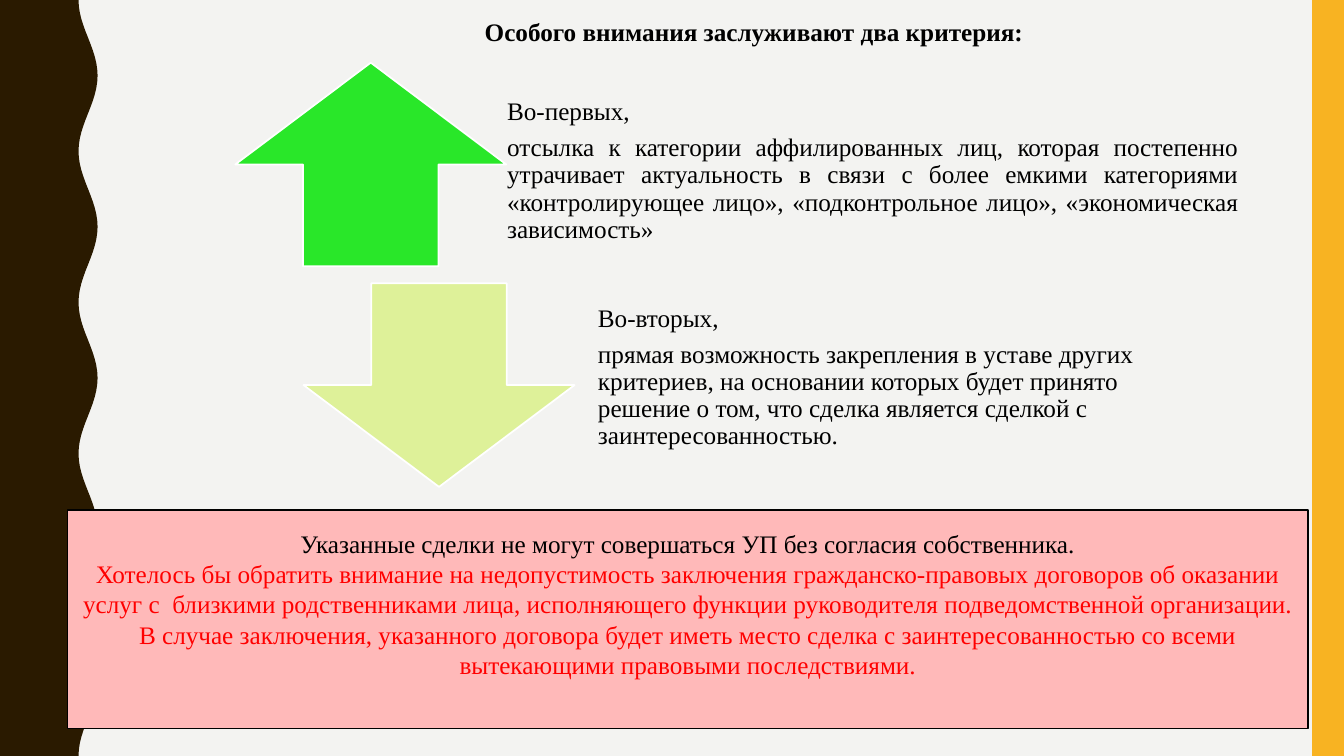
from math import cos, pi

from pptx import Presentation
from pptx.dml.color import RGBColor
from pptx.enum.shapes import MSO_SHAPE as Shape
from pptx.enum.text import MSO_ANCHOR as Anchor, MSO_AUTO_SIZE as AutoSize, PP_ALIGN as Align
from pptx.util import Cm, Pt

PAPER = RGBColor(0xF3, 0xF3, 0xF1)
BROWN = RGBColor(0x2A, 0x1A, 0x00)
AMBER = RGBColor(0xF8, 0xB3, 0x22)
GREEN = RGBColor(0x29, 0xE7, 0x29)
LIME = RGBColor(0xDE, 0xF1, 0x99)
PINK = RGBColor(0xFF, 0xB9, 0xB9)
RED = RGBColor(0xFF, 0x00, 0x00)
BLACK = RGBColor(0x00, 0x00, 0x00)
WHITE = RGBColor(0xFF, 0xFF, 0xFF)

WIDTH, HEIGHT = 33.87, 19.05
ARROW_W, ARROW_H = 6.83, 5.13
BAND_W = 0.8


def apply(target, values):
    for name, value in values.items():
        setattr(target, name, value)


class SlideBuilder:
    font = {"name": "Times New Roman", "size": Pt(18), "bold": False}
    criterion = {"line_spacing": 0.9, "space_after": Pt(6.3)}

    def __init__(self, prs):
        self.slide = prs.slides.add_slide(prs.slide_layouts[5])
        fill = self.slide.background.fill
        fill.solid()
        fill.fore_color.rgb = PAPER

    def paint(self, sp, color, line=None):
        sp.shadow.inherit = False
        sp.fill.solid()
        sp.fill.fore_color.rgb = color
        if line is None:
            sp.line.fill.background()
        else:
            sp.line.color.rgb = line
            sp.line.width = Pt(1.25)

    def put_text(self, sp, paragraphs, frame, para, font={}):
        tf = sp.text_frame
        apply(tf, {"word_wrap": True, "auto_size": AutoSize.NONE, **frame})
        for i, (text, color) in enumerate(paragraphs):
            p = tf.add_paragraph() if i else tf.paragraphs[0]
            apply(p, para)
            r = p.add_run()
            r.text = text
            apply(r.font, {**self.font, **font})
            r.font.color.rgb = color

    def title(self, text, left, top, width, height):
        sp = self.slide.shapes.title
        apply(sp, {"left": Cm(left), "top": Cm(top), "width": Cm(width), "height": Cm(height)})
        self.put_text(sp, [(text, BLACK)], {"vertical_anchor": Anchor.TOP},
                      {"alignment": Align.CENTER}, {"bold": True})

    def shape(self, kind, left, top, width, height, color, line=None):
        sp = self.slide.shapes.add_shape(kind, Cm(left), Cm(top), Cm(width), Cm(height))
        self.paint(sp, color, line)
        return sp

    def wavy_edge(self, middle, swing, waves, color):
        steps = waves * 24
        points = [(Cm(middle - swing * cos(2 * pi * waves * i / steps)), Cm(HEIGHT * i / steps))
                  for i in range(steps + 1)]
        outline = self.slide.shapes.build_freeform(0, 0)
        outline.add_line_segments(points + [(0, Cm(HEIGHT))])
        self.paint(outline.convert_to_shape(), color)

    def text(self, lines, left, top, width, height, align):
        sp = self.slide.shapes.add_textbox(Cm(left), Cm(top), Cm(width), Cm(height))
        frame = {"vertical_anchor": Anchor.MIDDLE, "margin_left": Cm(0.36), "margin_top": 0,
                 "margin_right": Cm(0.36), "margin_bottom": Cm(0.36)}
        self.put_text(sp, [(line, BLACK) for line in lines], frame,
                      {**self.criterion, "alignment": align})

    def note(self, paragraphs, left, top, width, height):
        sp = self.shape(Shape.RECTANGLE, left, top, width, height, PINK, BLACK)
        self.put_text(sp, paragraphs,
                      {"vertical_anchor": Anchor.MIDDLE, "margin_bottom": Cm(0.9)},
                      {"alignment": Align.CENTER})


def main():
    prs = Presentation()
    prs.slide_width, prs.slide_height = Cm(WIDTH), Cm(HEIGHT)
    s = SlideBuilder(prs)

    s.wavy_edge(2.22, 0.24, 5, BROWN)
    s.shape(Shape.RECTANGLE, WIDTH - BAND_W, 0, BAND_W, HEIGHT, AMBER)
    s.title("Особого внимания заслуживают два критерия:", 6.35, 0.28, 25.3, 1.02)

    s.shape(Shape.UP_ARROW, 5.93, 1.58, ARROW_W, ARROW_H, GREEN, WHITE)
    s.text(["Во-первых,",
            "отсылка к категории аффилированных лиц, которая постепенно утрачивает "
            "актуальность в связи с более емкими категориями «контролирующее лицо», "
            "«подконтрольное лицо», «экономическая зависимость»"],
           12.42, 1.93, 19.15, ARROW_H, Align.JUSTIFY)

    s.shape(Shape.DOWN_ARROW, 7.65, 7.14, ARROW_W, ARROW_H, LIME, WHITE)
    s.text(["Во-вторых,",
            "прямая возможность закрепления в уставе других критериев, на основании "
            "которых будет принято решение о том, что сделка является сделкой с "
            "заинтересованностью."],
           14.71, 7.14, 16.31, ARROW_H, Align.LEFT)

    s.note([("Указанные сделки не могут совершаться УП без согласия собственника.", BLACK),
            ("Хотелось бы обратить внимание на недопустимость заключения "
             "гражданско-правовых договоров об оказании услуг с  близкими родственниками "
             "лица, исполняющего функции руководителя подведомственной организации. "
             "В случае заключения, указанного договора будет иметь место сделка с "
             "заинтересованностью со всеми вытекающими правовыми последствиями.", RED)],
           1.7, 12.85, 31.27, 5.51)

    prs.save("out.pptx")


if __name__ == "__main__":
    main()
